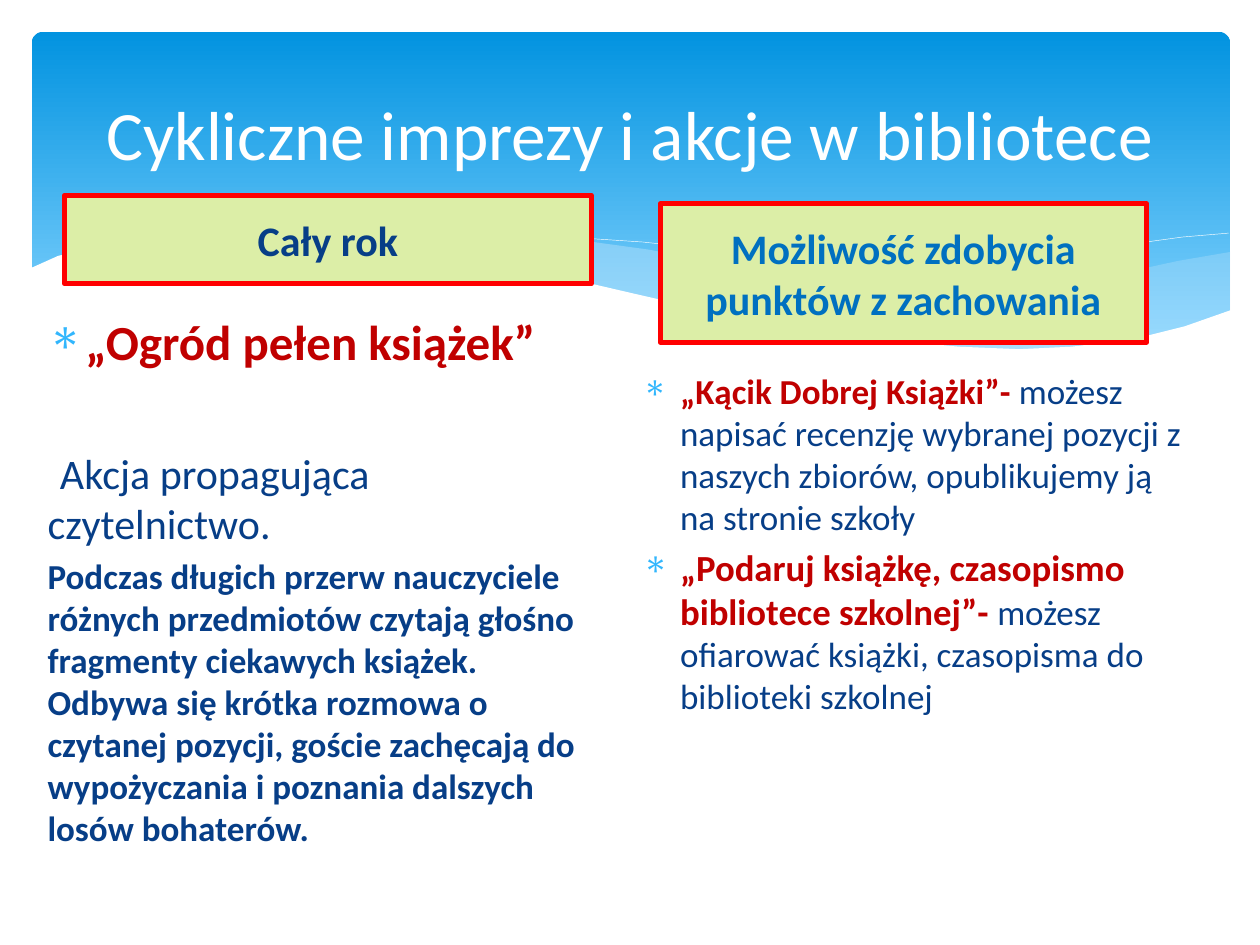
from lxml import etree
from pptx import Presentation
from pptx.dml.color import RGBColor
from pptx.enum.shapes import MSO_SHAPE
from pptx.enum.text import MSO_ANCHOR, PP_ALIGN
from pptx.oxml.ns import qn
from pptx.util import Cm, Pt

ROUND_RECT, RECT = MSO_SHAPE.ROUNDED_RECTANGLE, MSO_SHAPE.RECTANGLE
MIDDLE, TOP = MSO_ANCHOR.MIDDLE, MSO_ANCHOR.TOP
CENTER, LEFT = PP_ALIGN.CENTER, PP_ALIGN.LEFT

FONT = "Calibri"
WHITE, NAVY, BLUE, CRIMSON = "FFFFFF", "073E87", "0070C0", "C00000"
LIME, RED, SKY, PALE = "DCEEA7", "FF0000", "31B6FD", "C6E7FC"

# Wave outlines in cm from the top left corner of the band
RIGHT_WAVE = [
    (24.16, 4.44), (23.11, 4.62), (21.23, 5.03), (19.15, 5.51), (17.3, 5.89),
    (16.15, 6.1), (17.27, 6.25), (18.59, 6.38), (20.04, 6.43), (21.29, 6.35),
    (22.35, 6.2), (23.29, 5.94), (24.16, 5.64)]
MIDDLE_WAVE = [
    (6.63, 4.22), (7.7, 4.11), (9.02, 4.06), (10.03, 4.11), (11.18, 4.22),
    (12.42, 4.39), (13.82, 4.65), (15.34, 5), (17.3, 5.46), (19.05, 5.82),
    (20.62, 6.1), (22.05, 6.3), (21.13, 6.4), (19.86, 6.43), (18.69, 6.4),
    (17.37, 6.27), (15.88, 6.07), (14.2, 5.77), (12.83, 5.46), (10.77, 5),
    (9.63, 4.72), (8.05, 4.42)]
FALLING_LINE = [
    (7.21, 4.32), (8.33, 4.17), (9.55, 4.11), (10.8, 4.14), (12.32, 4.24),
    (14.15, 4.44), (16.26, 4.78), (17.83, 5.11), (19.56, 5.49), (21.44, 5.99),
    (22.4, 6.27)]
RISING_LINE = [
    (14.94, 5.89), (17.02, 5.33), (19.08, 4.85), (20.6, 4.55), (22.1, 4.29),
    (23.19, 4.14), (24.13, 4.06)]
WHITE_WAVE = [
    (24.18, 5.61), (23.24, 5.94), (22.2, 6.2), (20.96, 6.35), (19.91, 6.4),
    (18.69, 6.35), (17.35, 6.22), (15.82, 6.02), (14.07, 5.72), (12.14, 5.28),
    (10.72, 4.95), (9.3, 4.62), (8, 4.37), (6.78, 4.19), (5.72, 4.09),
    (4.27, 4.04), (3.07, 4.06), (2.06, 4.17), (1.3, 4.32), (0.53, 4.52),
    (-0.05, 4.78), (-0.05, 7.72), (24.18, 7.72)]


def rgb(color):
    return RGBColor.from_string(color)


def add_curve(s, left, top, points, fill=None, opacity=100):
    """Draw a filled outline, or an open white hairline when fill is None."""
    units = [(round(x * 100), round(y * 100)) for x, y in points]
    builder = s.shapes.build_freeform(*units[0], scale=Cm(0.01))
    builder.add_line_segments(units[1:], close=fill is not None)
    sp = builder.convert_to_shape(Cm(left), Cm(top))
    sp.shadow.inherit = False
    if fill is None:
        sp.fill.background()
        sp.line.color.rgb = rgb(WHITE)
        sp.line.width = Pt(0.25)
        return
    sp.fill.solid()
    sp.fill.fore_color.rgb = rgb(fill)
    sp.line.fill.background()
    if opacity < 100:
        clr = sp.fill._xPr.find(".//" + qn("a:srgbClr"))
        etree.SubElement(clr, qn("a:alpha")).set("val", str(opacity * 1000))


def add_wave_band(s, left, top, width, height):
    sp = s.shapes.add_shape(ROUND_RECT, Cm(left), Cm(top), Cm(width), Cm(height))
    sp.adjustments[0] = 0.034
    sp.shadow.inherit = False
    sp.line.fill.background()
    sp.fill.gradient()
    sp.fill.gradient_angle = 270
    for stop, color, position in zip(sp.fill.gradient_stops, ("0293E0", "83D3FE"), (0, 0.9)):
        stop.color.rgb = rgb(color)
        stop.position = position
    add_curve(s, left, top, RIGHT_WAVE, PALE, 29)
    add_curve(s, left, top, MIDDLE_WAVE, PALE, 40)
    add_curve(s, left, top, FALLING_LINE)
    add_curve(s, left, top, RISING_LINE)
    add_curve(s, left, top, WHITE_WAVE, WHITE)


def add_run(p, text, size, color, bold):
    r = p.add_run()
    r.text = text
    r.font.name = FONT
    r.font.size = Pt(size)
    r.font.bold = bold
    r.font.color.rgb = rgb(color)


def set_indent(p, margin, first_line):
    pPr = p._p.get_or_add_pPr()
    pPr.set("marL", str(Cm(margin)))
    pPr.set("indent", str(Cm(first_line)))
    return pPr


def add_bullet(p):
    pPr = set_indent(p, 0.76, -0.76)
    clr = etree.SubElement(pPr, qn("a:buClr"))
    etree.SubElement(clr, qn("a:srgbClr")).set("val", SKY)
    etree.SubElement(pPr, qn("a:buChar")).set("char", "∗")


def add_title(s, left, top, width, height, text):
    sp = s.shapes.add_textbox(Cm(left), Cm(top), Cm(width), Cm(height))
    tf = sp.text_frame
    tf.word_wrap = True
    tf.vertical_anchor = MIDDLE
    p = tf.paragraphs[0]
    p.alignment = CENTER
    add_run(p, text, 39.6, WHITE, False)


def add_heading(s, left, top, width, height, text, color):
    sp = s.shapes.add_shape(RECT, Cm(left), Cm(top), Cm(width), Cm(height))
    sp.shadow.inherit = False
    sp.fill.solid()
    sp.fill.fore_color.rgb = rgb(LIME)
    sp.line.color.rgb = rgb(RED)
    sp.line.width = Pt(3)
    tf = sp.text_frame
    tf.word_wrap = True
    tf.vertical_anchor = MIDDLE
    p = tf.paragraphs[0]
    p.alignment = CENTER
    add_run(p, text, 24, color, True)


def add_column(s, left, top, width, height, paragraphs):
    """Each paragraph is (bulleted, first line indent in cm, space before in pt, runs)."""
    sp = s.shapes.add_textbox(Cm(left), Cm(top), Cm(width), Cm(height))
    tf = sp.text_frame
    tf.word_wrap = True
    tf.vertical_anchor = TOP
    for i, (bulleted, first_line, before, runs) in enumerate(paragraphs):
        p = tf.add_paragraph() if i else tf.paragraphs[0]
        p.alignment = LEFT
        if bulleted:
            add_bullet(p)
        else:
            set_indent(p, 0, first_line)
        if before:
            p.space_before = Pt(before)
        for run in runs:
            add_run(p, *run)


def main():
    prs = Presentation()
    prs.slide_width, prs.slide_height = Cm(25.4), Cm(19.05)
    s = prs.slides.add_slide(prs.slide_layouts[6])

    add_wave_band(s, 0.64, 0.64, 24.16, 6.86)
    add_title(s, 1.27, 0.94, 22.86, 3.48, "Cykliczne imprezy i akcje w bibliotece")

    add_heading(s, 1.3, 3.94, 10.62, 1.78, "Cały rok", NAVY)
    add_column(s, 0.71, 6.15, 11.61, 11.81, [
        (True, 0, 0, [("„Ogród pełen książek”", 28, CRIMSON, True)]),
        (False, 0.25, 44, [("Akcja propagująca czytelnictwo.", 24, NAVY, False)]),
        (False, 0, 4, [(
            "Podczas długich przerw nauczyciele różnych przedmiotów czytają głośno "
            "fragmenty ciekawych książek. Odbywa się krótka rozmowa o czytanej pozycji, "
            "goście zachęcają do wypożyczania i poznania dalszych losów bohaterów.",
            20, NAVY, True)]),
    ])

    add_heading(s, 13.31, 4.11, 9.8, 2.79, "Możliwość zdobycia punktów z zachowania", BLUE)
    add_column(s, 12.7, 7.32, 11.61, 11, [
        (True, 0, 0, [
            ("„Kącik Dobrej Książki”- ", 20, CRIMSON, True),
            ("możesz napisać recenzję wybranej pozycji z naszych zbiorów, "
             "opublikujemy ją na stronie szkoły", 20, NAVY, False)]),
        (True, 0, 4, [
            ("„Podaruj książkę, czasopismo bibliotece szkolnej”- ", 21, CRIMSON, True),
            ("możesz ofiarować książki, czasopisma do biblioteki szkolnej",
             20, NAVY, False)]),
    ])
    prs.save("out.pptx")


if __name__ == "__main__":
    main()
